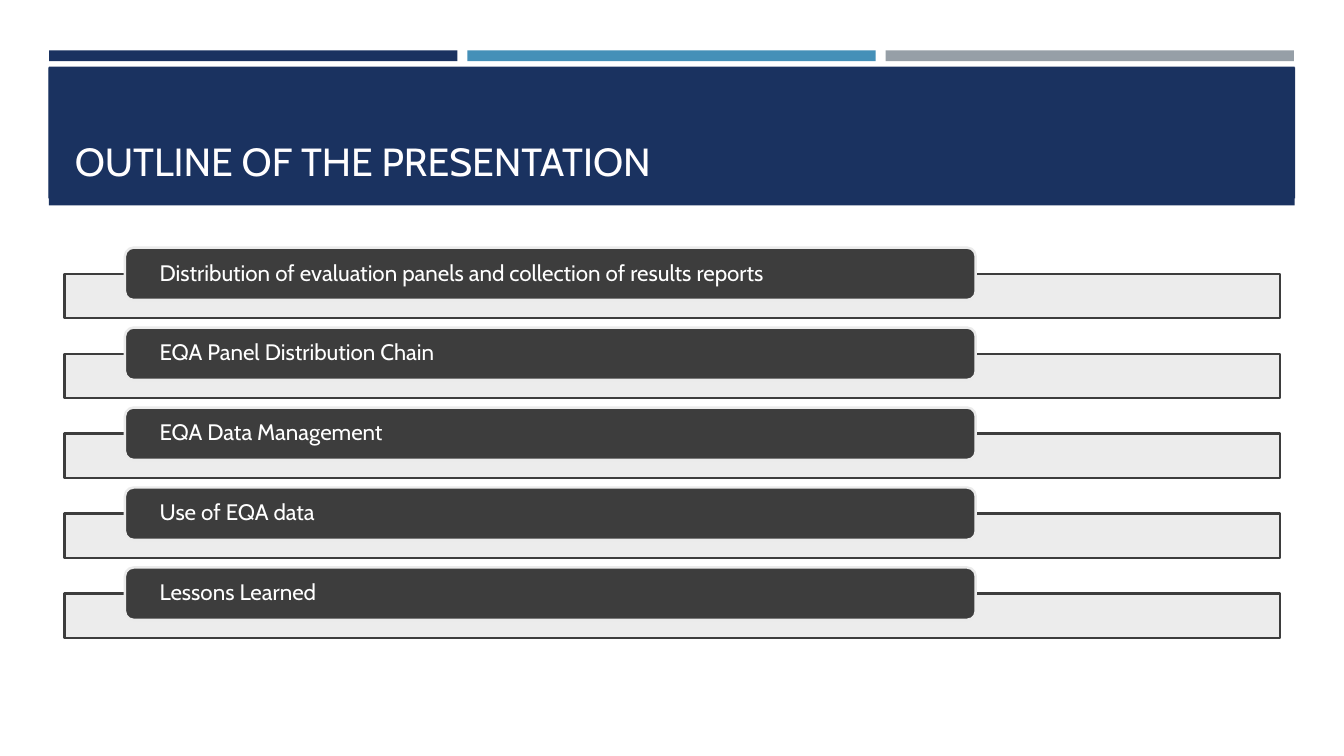
import pptx
import pptx.util
import pptx.dml.color
import pptx.enum.shapes
import pptx.enum.text
import pptx.oxml
import pptx.oxml.ns
import lxml.etree

Cm = pptx.util.Cm
Pt = pptx.util.Pt
KIND = pptx.enum.shapes.MSO_SHAPE
ALIGN = pptx.enum.text.PP_ALIGN
ANCHOR = pptx.enum.text.MSO_ANCHOR

TITLE = "OUTLINE OF THE PRESENTATION"
TOPICS = [
    "Distribution of evaluation panels and collection of results reports",
    "EQA Panel Distribution Chain",
    "EQA Data Management",
    "Use of EQA data",
    "Lessons Learned",
]
FONT = "Cabin"
NAVY, DARK, PALE = "1A3260", "3D3D3D", "EBEBEB"
STRIPS = [NAVY, "4590B8", "969FA7"]
BANNERS = [(1.23, 1.68, 31.4, 3.5), (1.22, 1.7, 31.42, 3.3)]

STRIP_X, STRIP_Y, STRIP_W, STRIP_H, STRIP_STEP = 1.24, 1.27, 10.29, 0.27, 10.54
BAR_X, BAR_Y, BAR_W, BAR_H = 1.63, 6.9, 30.63, 1.12
TAB_X, TAB_Y, TAB_W, TAB_H = 3.15, 6.24, 21.44, 1.32
ROW_STEP = 2.015


def rgb(code):
    return pptx.dml.color.RGBColor.from_string(code)


def block(slide, box, fill, line=None, kind=KIND.RECTANGLE):
    shape = slide.shapes.add_shape(kind, *map(Cm, box))
    shape.shadow.inherit = False
    shape.fill.solid()
    shape.fill.fore_color.rgb = rgb(fill)
    if line:
        shape.line.color.rgb = rgb(line)
        shape.line.width = Pt(1.75)
    else:
        shape.line.fill.background()
    return shape


def fade(shape, share):
    """Make the solid fill opaque only to the given percentage."""
    qn = pptx.oxml.ns.qn
    color = shape.fill._xPr.find(qn("a:solidFill"))[0]
    lxml.etree.SubElement(color, qn("a:alpha")).set("val", str(share * 1000))


def write(shape, text, size, color):
    frame = shape.text_frame
    frame.text = text
    frame.word_wrap = True
    para = frame.paragraphs[0]
    para.alignment = ALIGN.LEFT
    para.font.name = FONT
    para.font.size = Pt(size)
    para.font.color.rgb = rgb(color)
    return frame


def head(slide):
    for box in BANNERS:
        block(slide, box, NAVY)
    for i, color in enumerate(STRIPS):
        left = STRIP_X + i * STRIP_STEP
        block(slide, (left, STRIP_Y, STRIP_W, STRIP_H), color)
    title = slide.shapes.title
    title.left, title.top = Cm(1.63), Cm(1.96)
    title.width, title.height = Cm(30.63), Cm(2.82)
    frame = write(title, TITLE, 28, "FFFEFF")
    frame.vertical_anchor = ANCHOR.BOTTOM
    # Bring the title in front of the banner
    slide.shapes._spTree.append(title._element)


def row(slide, i, topic):
    drop = i * ROW_STEP
    bar = block(slide, (BAR_X, BAR_Y + drop, BAR_W, BAR_H), PALE, DARK)
    fade(bar, 90)
    tab = block(slide, (TAB_X, TAB_Y + drop, TAB_W, TAB_H), DARK, PALE,
                KIND.ROUNDED_RECTANGLE)
    frame = write(tab, topic, 16, "FFFFFF")
    frame.vertical_anchor = ANCHOR.MIDDLE
    frame.margin_left = frame.margin_right = Cm(0.81)
    frame.margin_top = frame.margin_bottom = 0
    frame.paragraphs[0].line_spacing = 0.9


def main():
    deck = pptx.Presentation()
    deck.slide_width, deck.slide_height = Cm(33.87), Cm(19.05)
    slide = deck.slides.add_slide(deck.slide_layouts[5])
    head(slide)
    for i, topic in enumerate(TOPICS):
        row(slide, i, topic)
    deck.save("out.pptx")


if __name__ == "__main__":
    main()
